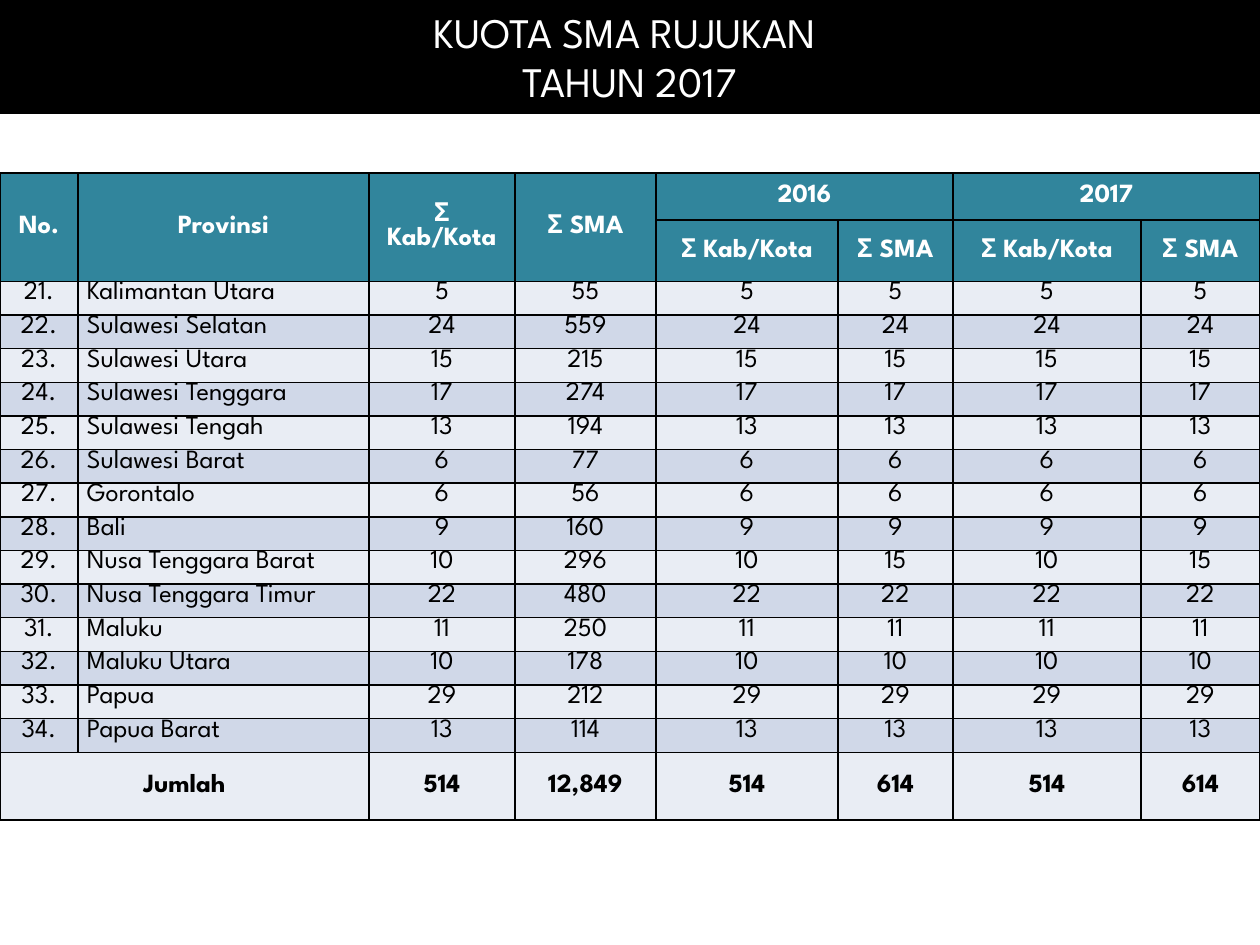
from lxml import etree
from pptx import Presentation, util as u
from pptx.dml.color import RGBColor
from pptx.enum import text
from pptx.oxml.ns import qn

PX = 914400 / 126
FONT = "League Spartan"
HEADER, LIGHT, DARK = "31859C", "E9EDF4", "D0D8E8"
BLACK, WHITE = "000000", "FFFFFF"

COLUMN_WIDTHS = [78, 291, 146, 141, 182, 115, 188, 119]
HEADER_HEIGHTS = [47, 61]
BODY_HEIGHT, TOTAL_HEIGHT = 471, 68

FIRST_NUMBER = 21
# Province, districts, schools, quota of schools in each year
PROVINCES = [
    ("Kalimantan Utara", 5, 55, 5),
    ("Sulawesi Selatan", 24, 559, 24),
    ("Sulawesi Utara", 15, 215, 15),
    ("Sulawesi Tenggara", 17, 274, 17),
    ("Sulawesi Tengah", 13, 194, 13),
    ("Sulawesi Barat", 6, 77, 6),
    ("Gorontalo", 6, 56, 6),
    ("Bali", 9, 160, 9),
    ("Nusa Tenggara Barat", 10, 296, 15),
    ("Nusa Tenggara Timur", 22, 480, 22),
    ("Maluku", 11, 250, 11),
    ("Maluku Utara", 10, 178, 10),
    ("Papua", 29, 212, 29),
    ("Papua Barat", 13, 114, 13),
]
TOTALS = (514, 12849, 614)


def px(length):
    return u.Emu(round(length * PX))


def rgb(colour):
    return RGBColor.from_string(colour)


def style_runs(paragraph, size, colour, bold=False):
    for run in paragraph.runs:
        run.font.name = FONT
        run.font.size = u.Pt(size)
        run.font.bold = bold
        run.font.color.rgb = rgb(colour)


def add_title(slide, lines):
    title = slide.shapes.title
    title.left, title.top, title.width, title.height = px(0), px(0), px(1260), px(114)
    title.fill.solid()
    title.fill.fore_color.rgb = rgb(BLACK)
    frame = title.text_frame
    frame.text = "\n".join(lines)
    frame.auto_size = text.MSO_AUTO_SIZE.NONE
    frame.vertical_anchor = text.MSO_ANCHOR.MIDDLE
    for paragraph in frame.paragraphs:
        paragraph.alignment = text.PP_ALIGN.CENTER
        paragraph.line_spacing = u.Pt(28)
        style_runs(paragraph, 24, WHITE)


def add_borders(cell):
    properties = cell._tc.get_or_add_tcPr()
    for position, side in enumerate(("lnL", "lnR", "lnT", "lnB")):
        line = etree.Element(qn(f"a:{side}"), w=str(u.Pt(1)))
        fill = etree.SubElement(line, qn("a:solidFill"))
        etree.SubElement(fill, qn("a:srgbClr"), val=BLACK)
        properties.insert(position, line)


def fill_row(table, row, values, fill, colour=BLACK, bold=False, middle=False):
    for column, value in enumerate(values):
        cell = table.cell(row, column)
        cell.fill.solid()
        cell.fill.fore_color.rgb = rgb(fill)
        add_borders(cell)
        if middle:
            cell.vertical_anchor = text.MSO_ANCHOR.MIDDLE
        if fill != HEADER:
            cell.margin_left = cell.margin_right = px(9)
            cell.margin_top = cell.margin_bottom = 0
        if value == "":
            continue
        cell.text_frame.text = value
        paragraph = cell.text_frame.paragraphs[0]
        is_province = column == 1 and fill != HEADER
        paragraph.alignment = text.PP_ALIGN.LEFT if is_province else text.PP_ALIGN.CENTER
        style_runs(paragraph, 15, colour, bold)


def figures(districts, schools, quota):
    """Texts of the six number columns; both years have the same quota."""
    return [f"{n:,}" for n in (districts, schools, *(districts, quota) * 2)]


def add_quota_table(slide):
    row_count = len(HEADER_HEIGHTS) + len(PROVINCES) + 1
    table_height = sum(HEADER_HEIGHTS) + BODY_HEIGHT + TOTAL_HEIGHT
    table = slide.shapes.add_table(row_count, len(COLUMN_WIDTHS), px(0), px(173),
                                   px(sum(COLUMN_WIDTHS)), px(table_height)).table
    table.first_row = table.horz_banding = False
    for column, width in zip(table.columns, COLUMN_WIDTHS):
        column.width = px(width)
    province_heights = [BODY_HEIGHT / len(PROVINCES)] * len(PROVINCES)
    for row, height in zip(table.rows, HEADER_HEIGHTS + province_heights + [TOTAL_HEIGHT]):
        row.height = px(height)

    pair = ["Σ Kab/Kota", "Σ SMA"]
    header = {"fill": HEADER, "colour": WHITE, "bold": True, "middle": True}
    fill_row(table, 0, ["No.", "Provinsi", *pair, "2016", "", "2017", ""], **header)
    fill_row(table, 1, [""] * 4 + pair * 2, **header)
    for index, (province, *numbers) in enumerate(PROVINCES):
        fill_row(table, index + len(HEADER_HEIGHTS),
                 [f"{FIRST_NUMBER + index}.", province, *figures(*numbers)],
                 DARK if index % 2 else LIGHT)
    last = row_count - 1
    fill_row(table, last, ["Jumlah", "", *figures(*TOTALS)], LIGHT, bold=True, middle=True)

    for column in range(4):
        table.cell(0, column).merge(table.cell(1, column))
    for row, column in ((0, 4), (0, 6), (last, 0)):
        table.cell(row, column).merge(table.cell(row, column + 1))


def main():
    deck = Presentation()
    deck.slide_width, deck.slide_height = px(1260), px(945)
    slide = deck.slides.add_slide(deck.slide_layouts.get_by_name("Title Only"))
    add_quota_table(slide)
    add_title(slide, ["KUOTA SMA RUJUKAN ", "TAHUN 2017"])
    deck.save("out.pptx")


if __name__ == "__main__":
    main()
